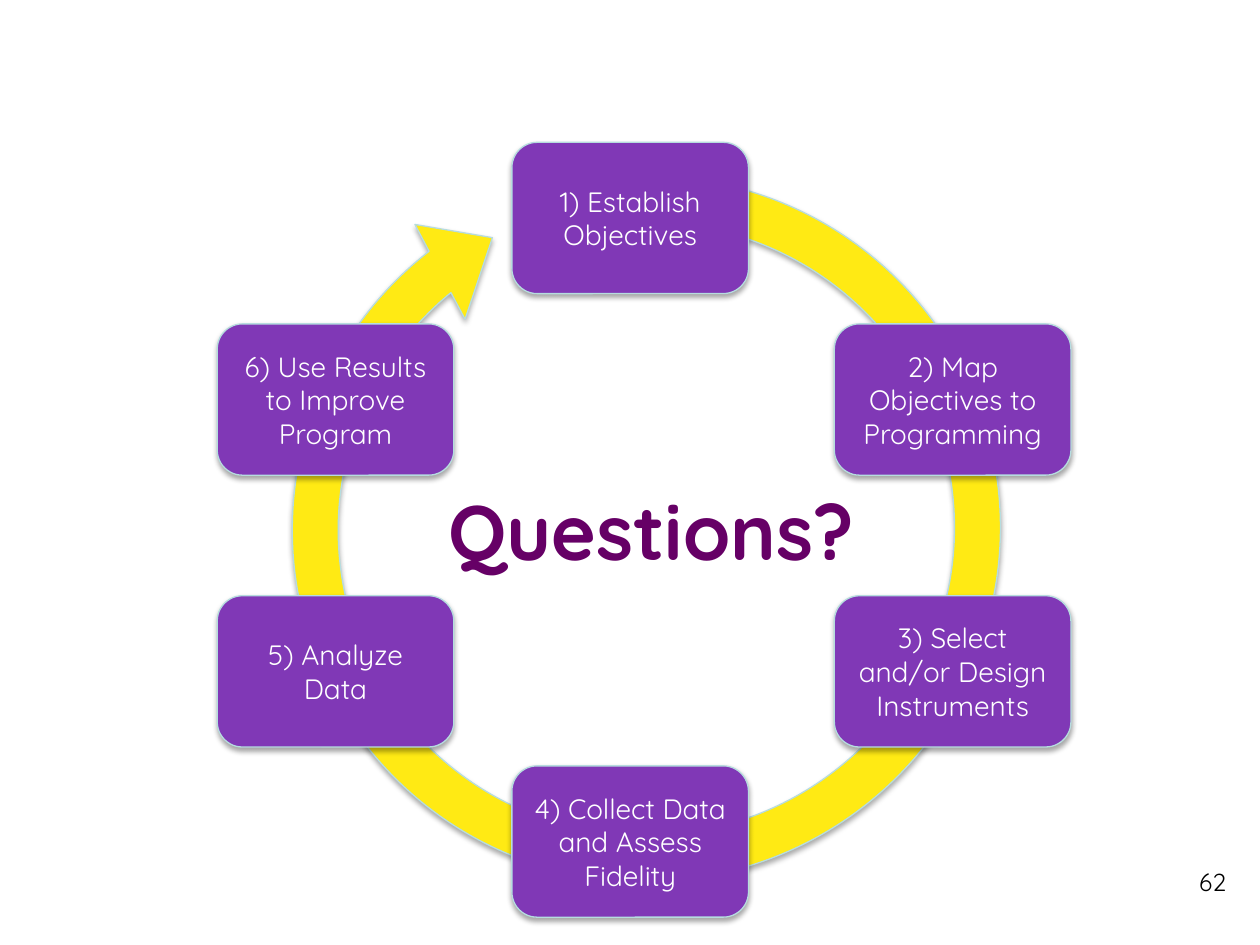
import pptx
import pptx.dml.color
import pptx.enum.shapes
import pptx.enum.text
import pptx.oxml
import pptx.oxml.ns
import pptx.util

Cm = pptx.util.Cm
Pt = pptx.util.Pt
RGB = pptx.dml.color.RGBColor
Shape = pptx.enum.shapes.MSO_SHAPE
Align = pptx.enum.text.PP_ALIGN
Anchor = pptx.enum.text.MSO_ANCHOR

FONT = "Quicksand"
PURPLE = RGB(0x80, 0x38, 0xB6)
PLUM = RGB(0x66, 0x00, 0x66)
YELLOW = RGB(0xFF, 0xEA, 0x14)
EDGE = RGB(0xB6, 0xDC, 0xDF)
WHITE = RGB(0xFF, 0xFF, 0xFF)
BLACK = RGB(0x00, 0x00, 0x00)

SHADOW = (
    f'<a:effectLst {pptx.oxml.ns.nsdecls("a")}>'
    f'<a:outerShdw blurRad="{Pt(3.1)}" dist="{Pt(1.8)}" dir="5400000" rotWithShape="0">'
    '<a:srgbClr val="000000"><a:alpha val="35000"/></a:srgbClr>'
    '</a:outerShdw></a:effectLst>'
)

# Step text with its column and row on the ring
STEPS = [
    ("1) Establish Objectives", 1, 0),
    ("2) Map Objectives to Programming", 2, 1),
    ("3) Select and/or Design Instruments", 2, 2),
    ("4) Collect Data and Assess Fidelity", 1, 3),
    ("5) Analyze Data", 0, 2),
    ("6) Use Results to Improve Program", 0, 1),
]
COLS = (0, 5.94, 12.44)
ROWS = (0, 3.66, 9.14, 12.57)
STEP_W, STEP_H = 4.77, 3.05


def write(shape, text, size=16, color=WHITE, bold=False,
          align=Align.CENTER, anchor=Anchor.MIDDLE):
    frame = shape.text_frame
    frame.word_wrap = True
    frame.vertical_anchor = anchor
    para = frame.paragraphs[0]
    para.alignment = align
    run = para.add_run()
    run.text = text
    run.font.name = FONT
    run.font.size = Pt(size)
    run.font.bold = bold
    run.font.color.rgb = color


def add_shape(slide, kind, box, fill):
    shape = slide.shapes.add_shape(kind, *map(Cm, box))
    shape.fill.solid()
    shape.fill.fore_color.rgb = fill
    shape.line.color.rgb = EDGE
    shape.line.width = Pt(0.75)
    # Swap the theme shadow for a soft one below the shape
    shape.shadow.inherit = False
    props = shape.element.spPr
    props.remove(props.find(pptx.oxml.ns.qn("a:effectLst")))
    props.append(pptx.oxml.parse_xml(SHADOW))
    return shape


def add_cycle(slide, left, top):
    # Ring arrow behind the steps
    ring = add_shape(slide, Shape.CIRCULAR_ARROW,
                     (left + 0.93, top + 0.03, 15.44, 15.52), YELLOW)
    ring.rotation = 250.3
    for i, value in enumerate((0.06, 6.54, 204.56, 3.22, 0.07)):
        ring.adjustments[i] = value

    # Steps
    for text, col, row in STEPS:
        box = (left + COLS[col], top + ROWS[row], STEP_W, STEP_H)
        write(add_shape(slide, Shape.ROUNDED_RECTANGLE, box, PURPLE), text)


def add_title(slide, box):
    title = slide.shapes.title
    title.left, title.top, title.width, title.height = map(Cm, box)
    write(title, "Questions?", size=44, color=PLUM, bold=True)


def add_number(slide, box):
    number = slide.shapes.add_textbox(*map(Cm, box))
    write(number, "62", size=14, color=BLACK,
          align=Align.RIGHT, anchor=Anchor.TOP)


def main():
    deck = pptx.Presentation()
    deck.slide_width, deck.slide_height = Cm(25.4), Cm(19.05)
    slide = deck.slides.add_slide(deck.slide_layouts[5])
    add_number(slide, (19.05, 17.35, 5.92, 1.32))
    add_cycle(slide, 4.38, 2.87)
    add_title(slide, (1.7, 9.09, 22.86, 3.18))
    deck.save("out.pptx")


if __name__ == "__main__":
    main()
